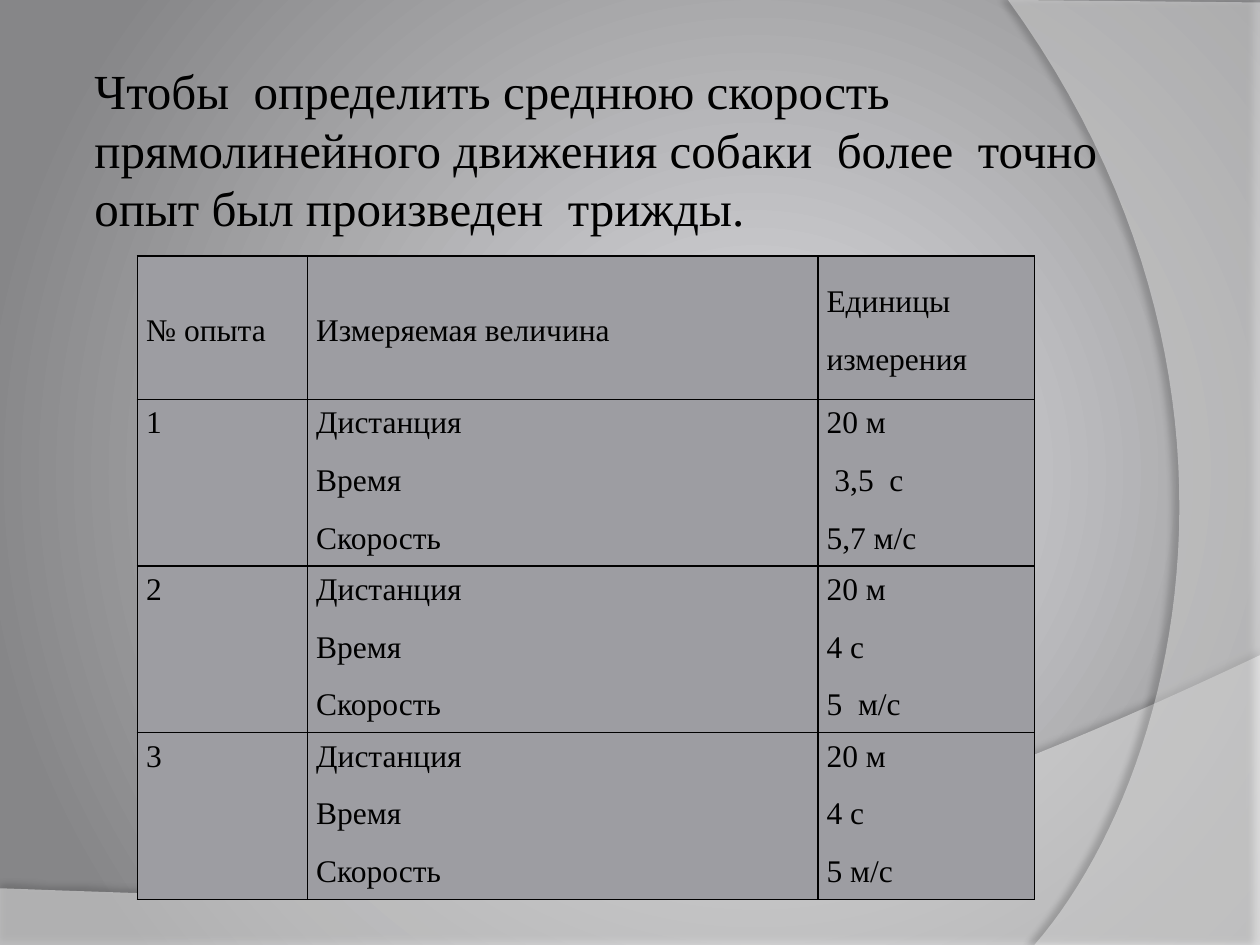
from lxml.etree import SubElement
from pptx import Presentation
from pptx.dml.color import RGBColor
from pptx.enum.text import MSO_ANCHOR
from pptx.oxml.ns import qn
from pptx.util import Inches, Pt

FONT = "Times New Roman"
BLACK = "000000"
HEADING = ("Чтобы  определить среднюю скорость прямолинейного движения "
           "собаки  более  точно  опыт был произведен  трижды.")
QUANTITIES = ["Дистанция", "Время", "Скорость"]
TRIALS = [
    ["20 м", " 3,5  с", "5,7 м/с"],
    ["20 м", "4 с", "5  м/с"],
    ["20 м", "4 с", "5 м/с"],
]
ROWS = [[["№ опыта"], ["Измеряемая величина"], ["Единицы", "измерения"]]]
ROWS += [[[str(number)], QUANTITIES, results]
         for number, results in enumerate(TRIALS, 1)]
COLUMN_WIDTHS = [1.35, 4.05, 1.72]
ROW_HEIGHTS = [1.14] + [1.23] * len(TRIALS)

BOTTOM_WAVE = {
    "corners": [(0, 7.05), (0, 7.51), (10, 7.51), (10, 5.2)],
    "curve": [(10, 5.2), (5.59, 7.29), (3.91, 7.19), (0, 7.05)],
    "opacity": 45, "shadow": (35, 4, 3.5, 270),
}
RIGHT_WAVE = {
    "corners": [(10, 0.02), (10, 7.5), (8.21, 7.5)],
    "curve": [(8.21, 7.5), (9.35, 6.19), (10.18, 3), (8, 0)],
    "opacity": 40, "shadow": (45, 4, 4, 180),
}


def color(value):
    return RGBColor.from_string(value)


def bezier(controls, steps=48):
    points = []
    for step in range(1, steps + 1):
        t = step / steps
        weights = [(1 - t) ** 3, 3 * t * (1 - t) ** 2, 3 * t * t * (1 - t), t ** 3]
        points.append(tuple(sum(w * c[axis] for w, c in zip(weights, controls))
                            for axis in (0, 1)))
    return points


def add_alpha(parent, percent):
    SubElement(parent, qn("a:alpha"), val=str(percent * 1000))


def paint_background(slide):
    fill = slide.background.fill
    fill.gradient()
    for stop, value, position in zip(fill.gradient_stops, ("DEDEE1", "868688"), (0, 1)):
        stop.color.rgb = color(value)
        stop.position = position
    gradient = slide.background._cSld.find(".//" + qn("a:gradFill"))
    linear = gradient.find(qn("a:lin"))
    circle = SubElement(gradient, qn("a:path"), path="circle")
    SubElement(circle, qn("a:fillToRect"), l="60000", t="50000", r="40000", b="50000")
    gradient.replace(linear, circle)


def add_wave(slide, wave):
    outline = [(Inches(x), Inches(y)) for x, y in wave["corners"] + bezier(wave["curve"])]
    builder = slide.shapes.build_freeform(*outline[0])
    builder.add_line_segments(outline[1:], close=True)
    shape = builder.convert_to_shape()
    shape.fill.solid()
    shape.fill.fore_color.rgb = color("FFFFFF")
    shape.line.fill.background()
    properties = shape._element.spPr
    add_alpha(properties.find(qn("a:solidFill"))[0], wave["opacity"])
    opacity, blur, distance, angle = wave["shadow"]
    shape.shadow.inherit = False
    shadow = SubElement(properties.find(qn("a:effectLst")), qn("a:outerShdw"),
                        blurRad=str(Pt(blur)), dist=str(Pt(distance)),
                        dir=str(angle * 60000), algn="ctr", rotWithShape="0")
    add_alpha(SubElement(shadow, qn("a:srgbClr"), val=BLACK), opacity)


def style(paragraph, size):
    paragraph.font.name = FONT
    paragraph.font.size = Pt(size)
    paragraph.font.color.rgb = color(BLACK)


def add_heading(slide):
    heading = slide.shapes.add_textbox(Inches(0.7), Inches(0.43), Inches(8.17), Inches(1.6))
    frame = heading.text_frame
    frame.word_wrap = True
    frame.margin_left = frame.margin_right = Inches(0.05)
    frame.margin_top = frame.margin_bottom = Inches(0.05)
    frame.text = HEADING
    style(frame.paragraphs[0], 28)


def add_borders(cell):
    properties = cell._tc.get_or_add_tcPr()
    for side in ("lnL", "lnR", "lnT", "lnB"):
        line = SubElement(properties, qn("a:" + side), w=str(Pt(1)))
        SubElement(SubElement(line, qn("a:solidFill")), qn("a:srgbClr"), val=BLACK)


def fill_cell(cell, lines, anchor):
    add_borders(cell)
    cell.fill.solid()
    cell.fill.fore_color.rgb = color("9D9DA2")
    cell.margin_left = cell.margin_right = Inches(0.07)
    cell.margin_top, cell.margin_bottom = Inches(0.01), 0
    cell.vertical_anchor = anchor
    cell.text = "\n".join(lines)
    for paragraph in cell.text_frame.paragraphs:
        style(paragraph, 18)
        paragraph.line_spacing = 1.15
        paragraph.space_after = Pt(10)


def add_results(slide):
    table = slide.shapes.add_table(
        len(ROWS), len(COLUMN_WIDTHS), Inches(1.09), Inches(2.03),
        Inches(sum(COLUMN_WIDTHS)), Inches(sum(ROW_HEIGHTS))).table
    for column, width in zip(table.columns, COLUMN_WIDTHS):
        column.width = Inches(width)
    for r, (height, row) in enumerate(zip(ROW_HEIGHTS, ROWS)):
        table.rows[r].height = Inches(height)
        anchor = MSO_ANCHOR.TOP if r else MSO_ANCHOR.MIDDLE
        for c, lines in enumerate(row):
            fill_cell(table.cell(r, c), lines, anchor)


def main():
    deck = Presentation()
    deck.slide_width, deck.slide_height = Inches(10), Inches(7.5)
    slide = deck.slides.add_slide(deck.slide_layouts[6])
    paint_background(slide)
    for wave in (BOTTOM_WAVE, RIGHT_WAVE):
        add_wave(slide, wave)
    add_heading(slide)
    add_results(slide)
    deck.save("out.pptx")


if __name__ == "__main__":
    main()
